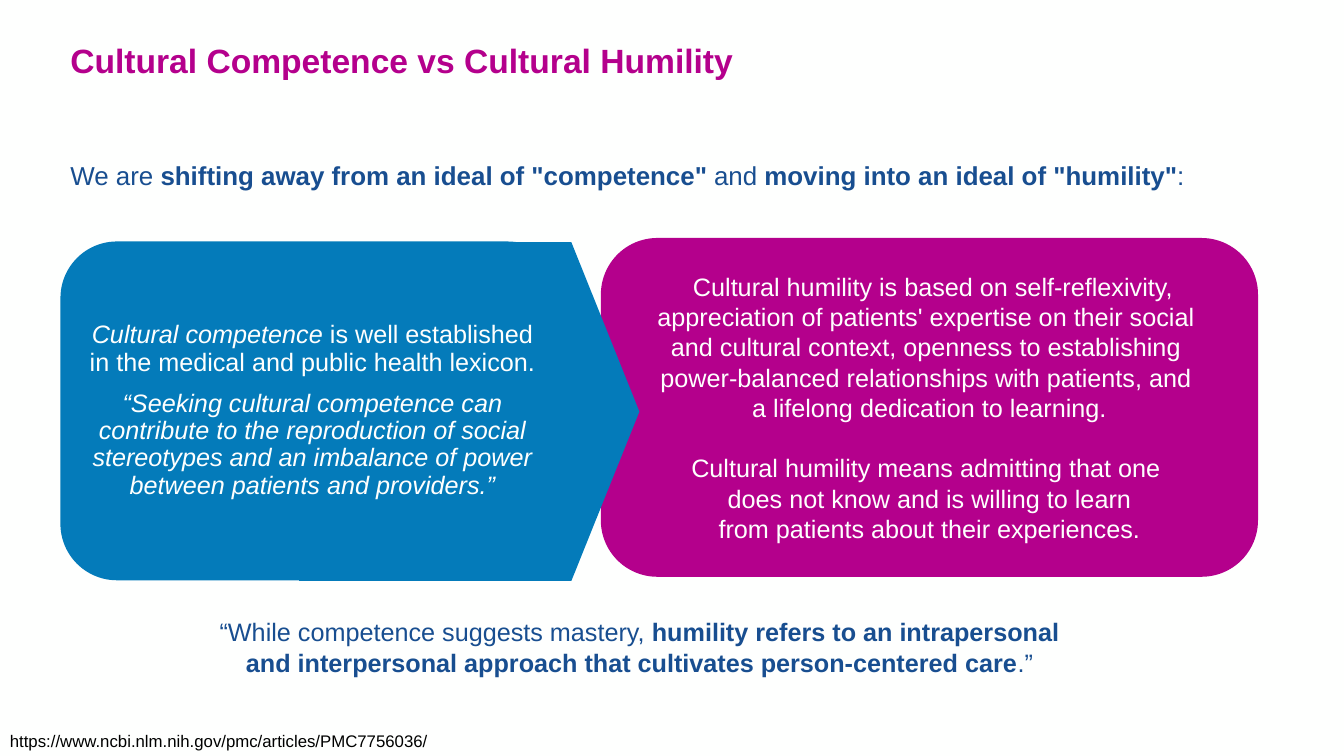
from pptx import Presentation
from pptx.dml.color import RGBColor
from pptx.enum.shapes import MSO_SHAPE
from pptx.enum.text import MSO_ANCHOR, PP_ALIGN
from pptx.util import Pt

ROUNDED = MSO_SHAPE.ROUNDED_RECTANGLE
PENTAGON = MSO_SHAPE.FLOWCHART_OFFPAGE_CONNECTOR
TOP, MIDDLE = MSO_ANCHOR.TOP, MSO_ANCHOR.MIDDLE
LEFT, CENTER = PP_ALIGN.LEFT, PP_ALIGN.CENTER
COLORS = {"paper": "FEFFFE", "magenta": "B4008C", "blue": "047BBA",
          "navy": "184E90", "black": "000000"}

SOURCE = "https://www.ncbi.nlm.nih.gov/pmc/articles/PMC7756036/"
INTRO = [("We are ", ""),
         ('shifting away from an ideal of "competence" ', "b"),
         ("and ", ""),
         ('moving into an ideal of "humility"', "b"),
         (":", "")]
COMPETENCE = [
    [("Cultural competence", "i"),
     (" is well established in the medical and public health lexicon.", "")],
    [("“Seeking cultural competence can contribute to the reproduction of social "
      "stereotypes and an imbalance of power between patients and providers.”", "i")]]
HUMILITY = [
    "\u00a0Cultural humility is based on self-reflexivity, appreciation of "
    "patients' expertise on their social ",
    "and cultural context, openness to establishing ",
    "power-balanced relationships with patients, and ",
    "a lifelong dedication to learning.",
    "Cultural humility means admitting that one ",
    "does not know and is willing to learn\vfrom patients about their experiences."]
QUOTE = [("“While competence suggests mastery, ", ""),
         ("humility refers to an intrapersonal and interpersonal approach "
          "that cultivates person-centered care", "b"),
         (".”", "")]


def rgb(name):
    """Return the named colour."""
    return RGBColor.from_string(COLORS[name])


def write(tf, paragraphs, size, color, align=LEFT, anchor=TOP, spacing=1.0):
    """Fill a text frame with paragraphs, each a string or a list of (text, style)."""
    tf.word_wrap = True
    tf.vertical_anchor = anchor
    for i, content in enumerate(paragraphs):
        p = tf.paragraphs[0] if i == 0 else tf.add_paragraph()
        p.alignment, p.line_spacing = align, spacing
        if isinstance(content, str):
            p.text = content
        else:
            for text, style in content:
                r = p.add_run()
                r.text = text
                r.font.bold, r.font.italic = "b" in style, "i" in style
        for r in p.runs:
            r.font.name, r.font.size = "Arial", Pt(size)
            r.font.color.rgb = rgb(color)


def add_text(s, box, paragraphs, size, color, **layout):
    """Place a text box."""
    tb = s.shapes.add_textbox(*map(Pt, box))
    write(tb.text_frame, paragraphs, size, color, **layout)


def add_panel(s, kind, box, color):
    """Place a filled shape without outline or shadow."""
    sp = s.shapes.add_shape(kind, *map(Pt, box))
    sp.shadow.inherit = False
    sp.fill.solid()
    sp.fill.fore_color.rgb = rgb(color)
    sp.line.fill.background()
    return sp


def add_humility(s, box):
    """Draw the right card."""
    tf = add_panel(s, ROUNDED, box, "magenta").text_frame
    write(tf, HUMILITY, 18, "paper", align=CENTER, anchor=MIDDLE)
    tf.paragraphs[4].space_before = Pt(21.6)


def add_competence(s, box):
    """Draw the left card and the arrow that points out of its right side."""
    x, y, w, h = box
    arrow = add_panel(s, PENTAGON, (x + w - 189, y, h, 243), "blue")
    arrow.rotation = 270
    tf = add_panel(s, ROUNDED, (x, y, w, h), "blue").text_frame
    write(tf, COMPETENCE, 18, "paper", align=CENTER, anchor=MIDDLE, spacing=0.9)
    tf.paragraphs[1].space_before = Pt(10)


def add_comparison(s, box):
    """Place both cards, the left one overlapping the right."""
    x, y, w, h = box
    add_humility(s, (x + 386, y, w - 386, h))
    add_competence(s, (x, y + 2.5, 360, h))


def main():
    """Build the slide and save it."""
    prs = Presentation()
    prs.slide_width, prs.slide_height = Pt(960), Pt(540)
    s = prs.slides.add_slide(prs.slide_layouts[6])
    s.background.fill.solid()
    s.background.fill.fore_color.rgb = rgb("paper")
    add_text(s, (43.2, -7.2, 828, 104.4),
             [[("Cultural Competence vs Cultural Humility", "b")]],
             24, "magenta", anchor=MIDDLE, spacing=0.9)
    add_text(s, (43.2, 108, 855.4, 48.2), [INTRO], 18.5, "navy", spacing=1.1)
    add_comparison(s, (43.2, 170, 855.4, 242))
    add_text(s, (137.5, 437, 638.6, 51), [QUOTE], 18, "navy", align=CENTER)
    add_text(s, (0, 518.4, 532, 21.6), [SOURCE], 12, "black")
    prs.save("out.pptx")


if __name__ == "__main__":
    main()
